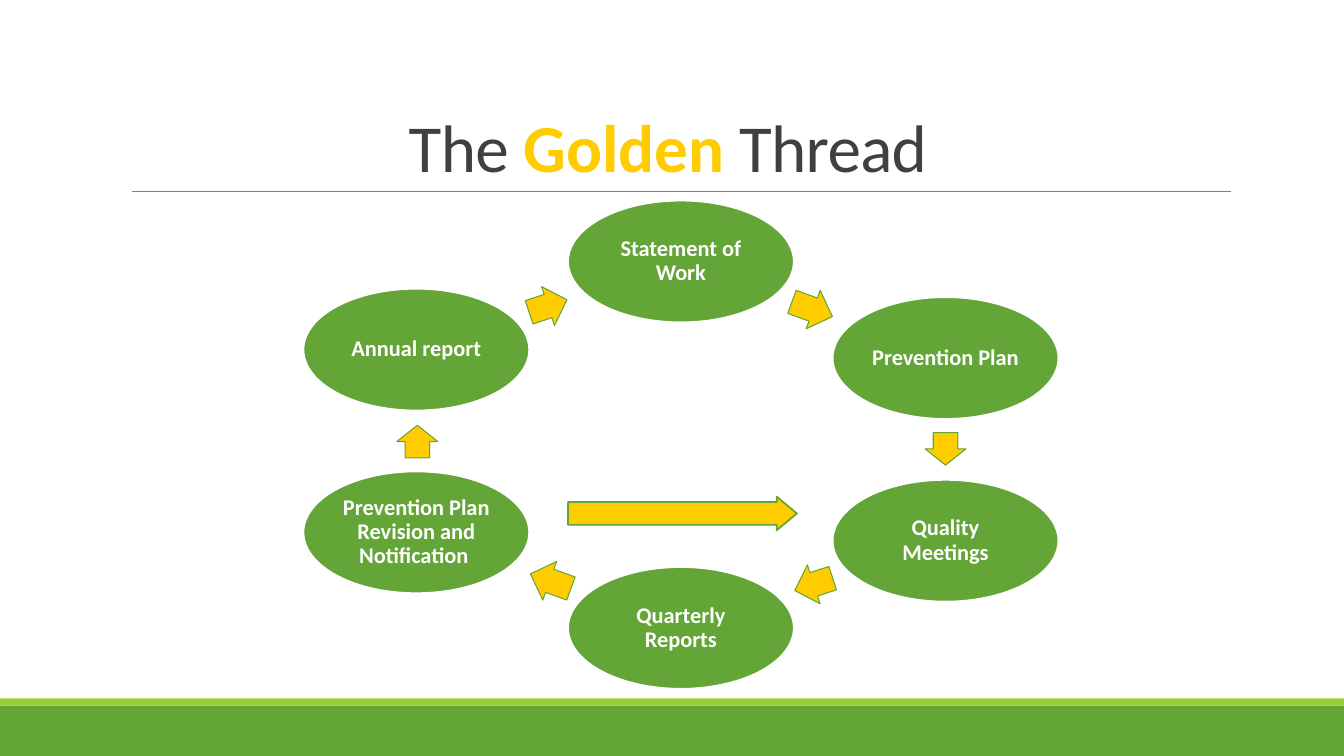
from dataclasses import dataclass

from pptx import Presentation
from pptx.dml.color import RGBColor
from pptx.enum.shapes import MSO_CONNECTOR, MSO_SHAPE
from pptx.enum.text import MSO_ANCHOR, PP_ALIGN
from pptx.oxml.ns import qn
from pptx.shapes.autoshape import Shape
from pptx.slide import Slide
from pptx.text.text import TextFrame
from pptx.util import Emu, Pt
from lxml import etree

RECT, OVAL, ARROW = MSO_SHAPE.RECTANGLE, MSO_SHAPE.OVAL, MSO_SHAPE.RIGHT_ARROW
STRAIGHT = MSO_CONNECTOR.STRAIGHT
MIDDLE, BOTTOM, CENTER = MSO_ANCHOR.MIDDLE, MSO_ANCHOR.BOTTOM, PP_ALIGN.CENTER

EMU_PER_PX = 9525
SLIDE_W, SLIDE_H = 1280, 720
STEP_W, STEP_H = 215, 116
COLUMN_LEFT, COLUMN_PITCH = 289, 252
ARROW_H = 39

COLORS = {
    "green": "63A537",
    "lime": "99CB38",
    "gold": "FFCC00",
    "gray": "808080",
    "dark": "404040",
    "white": "FFFFFF",
}


@dataclass(frozen=True)
class Box:
    left: int
    top: int
    width: int
    height: int


@dataclass(frozen=True)
class Step:
    label: str
    column: int
    top: int


@dataclass(frozen=True)
class Turn:
    left: int
    top: int
    width: int
    angle: float


@dataclass(frozen=True)
class Word:
    text: str
    color: str
    bold: bool
    tracking: int


TITLE = [
    Word("The ", "dark", False, -50),
    Word("Golden", "gold", True, 0),
    Word(" Thread ", "dark", False, -50),
]

# Clockwise from the top
STEPS = [
    Step("Statement of Work", 1, 191),
    Step("Prevention Plan", 2, 283),
    Step("Quality Meetings", 2, 457),
    Step("Quarterly Reports", 1, 540),
    Step("Prevention Plan Revision and Notification ", 0, 449),
    Step("Annual report", 0, 275),
]
TURNS = [
    Turn(753, 275, 41, 20),
    Turn(885, 408, 31, 90),
    Turn(756, 537, 38, 161.9),
    Turn(504, 534, 41, 199.8),
    Turn(382, 401, 31, 270),
    Turn(503, 272, 38, 341.6),
]


def px(length: int) -> Emu:
    return Emu(length * EMU_PER_PX)


def rgb(name: str) -> RGBColor:
    return RGBColor.from_string(COLORS[name])


def place(box: Box) -> tuple[Emu, Emu, Emu, Emu]:
    return px(box.left), px(box.top), px(box.width), px(box.height)


def apply(target: object, values: dict[str, object]) -> None:
    for name, value in values.items():
        setattr(target, name, value)


def format_frame(frame: TextFrame, anchor: MSO_ANCHOR, spacing: float,
                 insets: tuple[int, int]) -> None:
    side, end = (px(inset) for inset in insets)
    apply(frame, {"word_wrap": True, "vertical_anchor": anchor,
                  "margin_left": side, "margin_right": side,
                  "margin_top": end, "margin_bottom": end})
    apply(frame.paragraphs[0], {"alignment": CENTER, "line_spacing": spacing})


def add_word(frame: TextFrame, word: Word, size: int) -> None:
    run = frame.paragraphs[0].add_run()
    run.text = word.text
    apply(run.font, {"name": "Calibri", "size": Pt(size), "bold": word.bold})
    run.font.color.rgb = rgb(word.color)
    if word.tracking:
        run._r.get_or_add_rPr().set("spc", str(word.tracking))


def add_figure(slide: Slide, kind: MSO_SHAPE, box: Box, fill: str,
               line: str = "", weight: float = 1.25) -> Shape:
    figure = slide.shapes.add_shape(kind, *place(box))
    figure.shadow.inherit = False
    figure.fill.solid()
    figure.fill.fore_color.rgb = rgb(fill)
    if line:
        figure.line.color.rgb = rgb(line)
        figure.line.width = Pt(weight)
    else:
        figure.line.fill.background()
    return figure


def add_arrow(slide: Slide, box: Box, shaft: float, head: float,
              weight: float, angle: float = 0) -> None:
    arrow = add_figure(slide, ARROW, box, "gold", "green", weight)
    arrow.adjustments[0], arrow.adjustments[1] = shaft, head
    arrow.rotation = angle


def add_step(slide: Slide, step: Step) -> None:
    left = COLUMN_LEFT + step.column * COLUMN_PITCH
    oval = add_figure(slide, OVAL, Box(left, step.top, STEP_W, STEP_H), "green", "white")
    format_frame(oval.text_frame, MIDDLE, 0.9, (2, 2))
    add_word(oval.text_frame, Word(step.label, "white", True, 0), 16)


def add_title(slide: Slide) -> None:
    frame = slide.shapes.add_textbox(*place(Box(115, 30, 1056, 152))).text_frame
    format_frame(frame, BOTTOM, 0.85, (10, 5))
    for word in TITLE:
        add_word(frame, word, 48)


def add_rule(slide: Slide) -> None:
    rule = slide.shapes.add_connector(STRAIGHT, px(126), px(182), px(1172), px(182))
    rule.line.color.rgb = rgb("gray")
    rule.line.width = Pt(0.5)
    etree.SubElement(rule._element.spPr, qn("a:effectLst"))


def main() -> None:
    deck = Presentation()
    apply(deck, {"slide_width": px(SLIDE_W), "slide_height": px(SLIDE_H)})
    slide = deck.slides.add_slide(deck.slide_layouts[6])

    # Footer bands, title and rule
    add_figure(slide, RECT, Box(0, 672, SLIDE_W, 48), "green")
    add_figure(slide, RECT, Box(0, 665, SLIDE_W, 7), "lime")
    add_rule(slide)
    add_title(slide)

    # Cycle of steps, each followed by its arrow
    for step, turn in zip(STEPS, TURNS):
        add_step(slide, step)
        add_arrow(slide, Box(turn.left, turn.top, turn.width, ARROW_H),
                  0.6, 0.5, 0.75, turn.angle)

    # Shortcut from plan revision back to the meetings
    add_arrow(slide, Box(541, 473, 218, 32), 0.68, 0.6, 1.25)

    deck.save("out.pptx")


if __name__ == "__main__":
    main()
